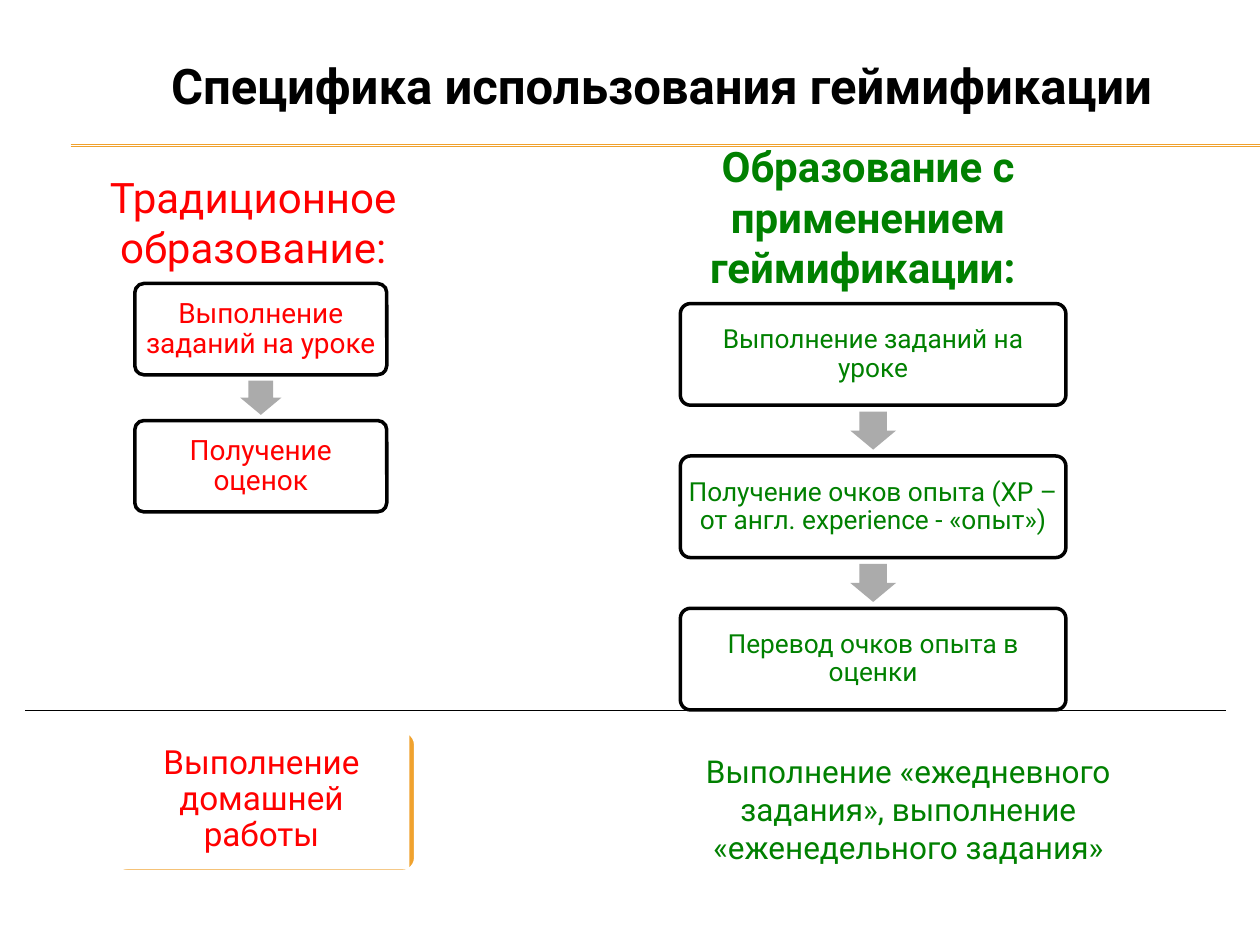
from dataclasses import dataclass

from lxml import etree
from pptx import Presentation
from pptx.dml.color import RGBColor
from pptx.enum.shapes import MSO_CONNECTOR, MSO_SHAPE
from pptx.enum.text import MSO_ANCHOR, PP_ALIGN
from pptx.oxml.ns import qn
from pptx.util import Inches, Pt

TOP, MIDDLE = MSO_ANCHOR.TOP, MSO_ANCHOR.MIDDLE
ROUNDED, RECT, ARROW = MSO_SHAPE.ROUNDED_RECTANGLE, MSO_SHAPE.RECTANGLE, MSO_SHAPE.RIGHT_ARROW
CENTER = PP_ALIGN.CENTER
STRAIGHT = MSO_CONNECTOR.STRAIGHT

BLACK = RGBColor(0x00, 0x00, 0x00)
WHITE = RGBColor(0xFF, 0xFF, 0xFF)
RED = RGBColor(0xFF, 0x00, 0x00)
GREEN = RGBColor(0x00, 0x80, 0x00)
ORANGE = RGBColor(0xF0, 0xA2, 0x2E)
GRAY = RGBColor(0xAB, 0xAB, 0xAB)

FONT = "Roboto"
WIDTH, HEIGHT = Inches(10), Inches(7.5)


@dataclass(frozen=True)
class Box:
    """Left and width in percent of slide width, top and height of slide height."""
    left: float
    top: float
    width: float
    height: float

    def emu(self) -> tuple[int, int, int, int]:
        return (int(WIDTH * self.left / 100), int(HEIGHT * self.top / 100),
                int(WIDTH * self.width / 100), int(HEIGHT * self.height / 100))


@dataclass(frozen=True)
class Style:
    size: float
    color: RGBColor
    bold: bool = False
    anchor: MSO_ANCHOR = TOP
    inset: float | None = None
    spacing: float | None = None


@dataclass(frozen=True)
class Chain:
    """Steps stacked downwards from the first box, with an arrow in each gap."""
    first: Box
    style: Style
    steps: tuple[str, ...]


TITLE = Style(28, BLACK, bold=True, anchor=MIDDLE)
HEADINGS = (
    (Box(7.5, 17.47, 25.2, 12.13), "Традиционное образование:", Style(24, RED)),
    (Box(45.3, 14.27, 47.2, 17.47), "Образование с применением геймификации: ",
     Style(24, GREEN, bold=True)),
)
CHAINS = (
    Chain(Box(10.7, 30, 20, 9.67), Style(16, RED, anchor=MIDDLE, inset=0.05, spacing=0.9),
          ("Выполнение заданий на уроке", "Получение оценок")),
    Chain(Box(54, 32.13, 30.6, 10.75), Style(15, GREEN, anchor=MIDDLE, inset=0.03, spacing=0.9),
          ("Выполнение заданий на уроке",
           "Получение очков опыта (XP – от англ. experience - «опыт»)",
           "Перевод очков опыта в оценки")),
)


def write(shape, text: str, style: Style) -> None:
    tf = shape.text_frame
    tf.word_wrap = True
    tf.vertical_anchor = style.anchor
    if style.inset is not None:
        tf.margin_left = tf.margin_right = Inches(style.inset)
        tf.margin_top = tf.margin_bottom = Inches(style.inset)
    p = tf.paragraphs[0]
    p.text = text
    p.alignment = CENTER
    if style.spacing:
        p.line_spacing = style.spacing
    p.font.name = FONT
    p.font.size = Pt(style.size)
    p.font.bold = style.bold
    p.font.color.rgb = style.color


def add_text(slide, box: Box, text: str, style: Style) -> None:
    write(slide.shapes.add_textbox(*box.emu()), text, style)


def add_block(slide, kind: MSO_SHAPE, place: tuple[int, int, int, int],
              fill: RGBColor, line: RGBColor | None = None):
    s = slide.shapes.add_shape(kind, *place)
    s.shadow.inherit = False
    s.fill.solid()
    s.fill.fore_color.rgb = fill
    if line is None:
        s.line.fill.background()
    else:
        s.line.color.rgb = line
        s.line.width = Pt(2)
    if kind == ROUNDED:
        s.adjustments[0] = 0.1
    return s


def add_chain(slide, chain: Chain) -> None:
    left, top, width, height = chain.first.emu()
    pitch = int(height * 1.5)
    length, breadth = int(height * 0.375), int(height * 0.45)
    for i, step in enumerate(chain.steps):
        y = top + i * pitch
        if i:
            gap_middle = y - (pitch - height) // 2
            arrow = add_block(slide, ARROW, (left + (width - length) // 2,
                                             gap_middle - breadth // 2, length, breadth), GRAY)
            arrow.rotation = 90
            arrow.adjustments[0] = 0.6
            arrow.adjustments[1] = 0.5
        write(add_block(slide, ROUNDED, (left, y, width, height), WHITE, BLACK),
              step, chain.style)


def add_rule(slide, left: float, right: float, y: float, color: RGBColor, weight: float) -> None:
    """Horizontal line, placed in percent of the slide."""
    x, top, width, _ = Box(left, y, right - left, 0).emu()
    c = slide.shapes.add_connector(STRAIGHT, x, top, x + width, top)
    c.line.color.rgb = color
    c.line.width = Pt(weight)
    etree.SubElement(c._element.spPr, qn("a:effectLst"))


def main() -> None:
    prs = Presentation()
    prs.slide_width, prs.slide_height = WIDTH, HEIGHT
    slide = prs.slides.add_slide(prs.slide_layouts[6])

    for y in (15.33, 15.47):
        add_rule(slide, 5.6, 100, y, ORANGE, 0.75)
    add_text(slide, Box(5, 2.8, 95, 12.27), "Специфика использования геймификации", TITLE)

    for chain in CHAINS:
        add_chain(slide, chain)
    for box, text, style in HEADINGS:
        add_text(slide, box, text, style)

    add_block(slide, ROUNDED, Box(9, 77.33, 24, 14.93).emu(), ORANGE, WHITE)
    homework = add_block(slide, RECT, Box(9, 77.33, 23.5, 14.67).emu(), WHITE)
    write(homework, "Выполнение домашней работы",
          Style(19, RED, anchor=MIDDLE, inset=0.08, spacing=0.9))

    quests = add_block(slide, ROUNDED, Box(51.6, 78.4, 41, 17.87).emu(), WHITE, WHITE)
    write(quests, "Выполнение «ежедневного задания», выполнение «еженедельного задания»",
          Style(18, GREEN))
    add_rule(slide, 2, 97.3, 75.2, BLACK, 0.79)

    prs.save("out.pptx")


if __name__ == "__main__":
    main()
